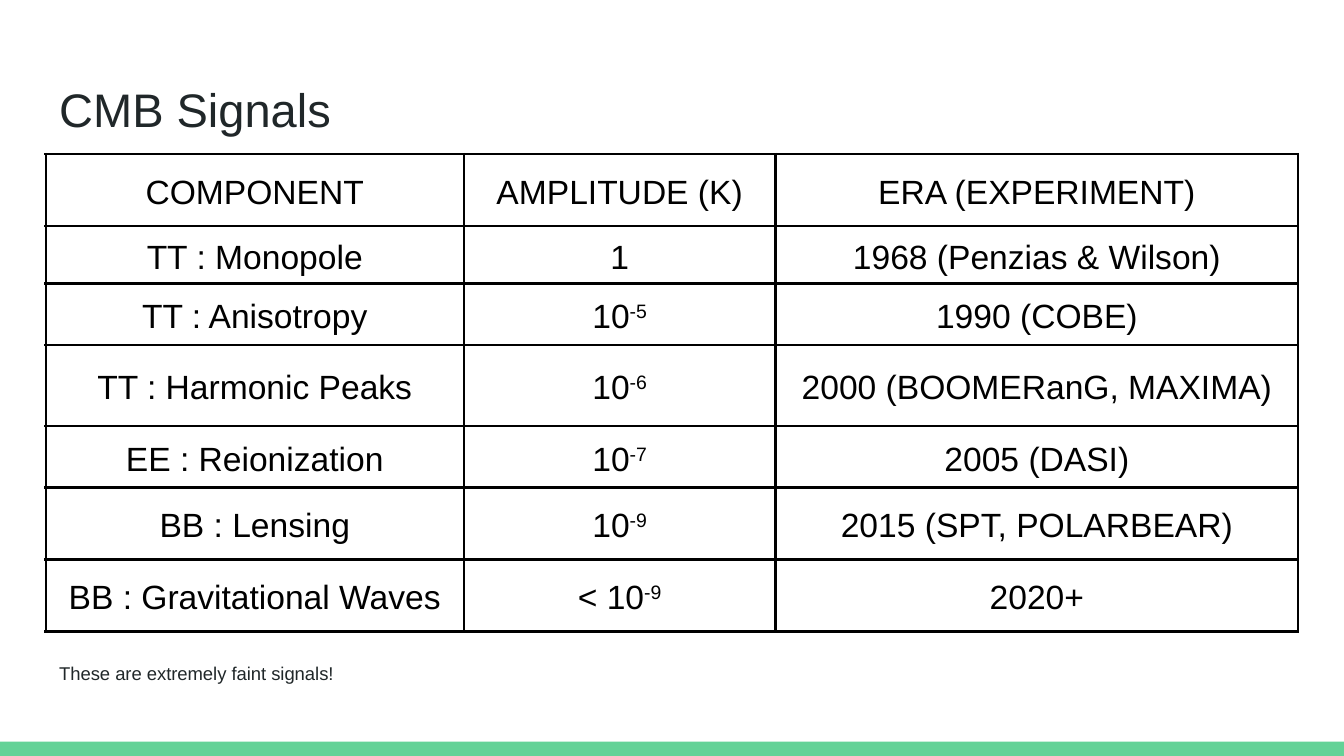
from lxml import etree
from pptx import Presentation
from pptx.dml.color import RGBColor
from pptx.enum import shapes, text
from pptx.oxml import ns
from pptx.util import Pt

COLORS = {"ink": "202729", "black": "000000", "green": "63D297"}
WIDTH, HEIGHT = 720, 405
LEFT, CONTENT_WIDTH = 24.5, 671


class SlideBuilder:
    font_name = "Arial"
    inset = 7.2

    def __init__(self, slide):
        self.slide = slide

    def color(self, name):
        return RGBColor.from_string(COLORS[name])

    def format_run(self, run, size, color):
        run.font.name = self.font_name
        run.font.size = Pt(size)
        run.font.bold = False
        run.font.color.rgb = self.color(color)

    def bar(self, top, height, color):
        shape = self.slide.shapes.add_shape(
            shapes.MSO_SHAPE.RECTANGLE, 0, Pt(top), Pt(WIDTH), Pt(height))
        shape.shadow.inherit = False
        shape.fill.solid()
        shape.fill.fore_color.rgb = self.color(color)
        shape.line.fill.background()

    def placeholder(self, index, content, top, height, size, anchor):
        shape = self.slide.placeholders[index]
        shape.left, shape.top = Pt(LEFT), Pt(top)
        shape.width, shape.height = Pt(CONTENT_WIDTH), Pt(height)
        frame = shape.text_frame
        frame.text = content
        frame.word_wrap = True
        frame.auto_size = text.MSO_AUTO_SIZE.NONE
        frame.vertical_anchor = anchor
        frame.margin_left = frame.margin_right = Pt(self.inset)
        frame.margin_top = frame.margin_bottom = Pt(self.inset)
        paragraph = frame.paragraphs[0]
        paragraph.alignment = text.PP_ALIGN.LEFT
        paragraph.space_before = Pt(0)
        self.format_run(paragraph.runs[0], size, "ink")
        return paragraph

    def title(self, content):
        self.placeholder(0, content, 35, 45.4, 25.2, text.MSO_ANCHOR.BOTTOM)

    def body(self, content):
        paragraph = self.placeholder(1, content, 348.5, 38, 9.9, text.MSO_ANCHOR.TOP)
        paragraph.line_spacing = 0.95
        paragraph.space_after = Pt(12)
        properties = paragraph._p.get_or_add_pPr()
        properties.set("marL", "0")
        properties.set("indent", "0")
        etree.SubElement(properties, ns.qn("a:buNone"))

    def cell_borders(self, cell, width):
        properties = cell._tc.get_or_add_tcPr()
        for side in ("lnL", "lnR", "lnT", "lnB"):
            line = etree.SubElement(properties, ns.qn(f"a:{side}"), w=str(Pt(width)))
            fill = etree.SubElement(line, ns.qn("a:solidFill"))
            etree.SubElement(fill, ns.qn("a:srgbClr"), val=COLORS["black"])

    def cell(self, cell, content):
        """Fill one cell; text after ^ is set as superscript."""
        self.cell_borders(cell, 1.5)
        cell.fill.background()
        cell.vertical_anchor = text.MSO_ANCHOR.MIDDLE
        cell.margin_left = cell.margin_right = Pt(7.2)
        cell.margin_top = cell.margin_bottom = Pt(3.6)
        paragraph = cell.text_frame.paragraphs[0]
        paragraph.alignment = text.PP_ALIGN.CENTER
        paragraph.line_spacing = 1.15
        for position, part in enumerate(content.split("^")):
            run = paragraph.add_run()
            run.text = part
            self.format_run(run, 18, "black")
            if position:
                run._r.get_or_add_rPr().set("baseline", "30000")

    def table(self, top, rows, widths, heights):
        table = self.slide.shapes.add_table(
            len(rows), len(widths), Pt(LEFT), Pt(top),
            Pt(sum(widths)), Pt(sum(heights))).table
        table.first_row = table.horz_banding = False
        for column, width in zip(table.columns, widths):
            column.width = Pt(width)
        for row, height, contents in zip(table.rows, heights, rows):
            row.height = Pt(height)
            for cell, content in zip(row.cells, contents):
                self.cell(cell, content)


SIGNALS = [
    ("COMPONENT", "AMPLITUDE (K)", "ERA (EXPERIMENT)"),
    ("TT : Monopole", "1", "1968 (Penzias & Wilson)"),
    ("TT : Anisotropy", "10^-5", "1990 (COBE)"),
    ("TT : Harmonic Peaks", "10^-6", "2000 (BOOMERanG, MAXIMA)"),
    ("EE : Reionization", "10^-7", "2005 (DASI)"),
    ("BB : Lensing", "10^-9", "2015 (SPT, POLARBEAR)"),
    ("BB : Gravitational Waves", "< 10^-9", "2020+"),
]


def main():
    presentation = Presentation()
    presentation.slide_width, presentation.slide_height = Pt(WIDTH), Pt(HEIGHT)
    slide = presentation.slides.add_slide(presentation.slide_layouts[1])
    builder = SlideBuilder(slide)

    # Footer band
    builder.bar(397.4, HEIGHT - 397.4, "green")

    # Title, signal table and closing remark
    builder.title("CMB Signals")
    builder.table(82.5, SIGNALS, widths=(224, 167, 280),
                  heights=(38.6, 30.8, 33, 43.3, 33, 38.6, 38.6))
    builder.body("These are extremely faint signals!")

    presentation.save("out.pptx")


if __name__ == "__main__":
    main()
